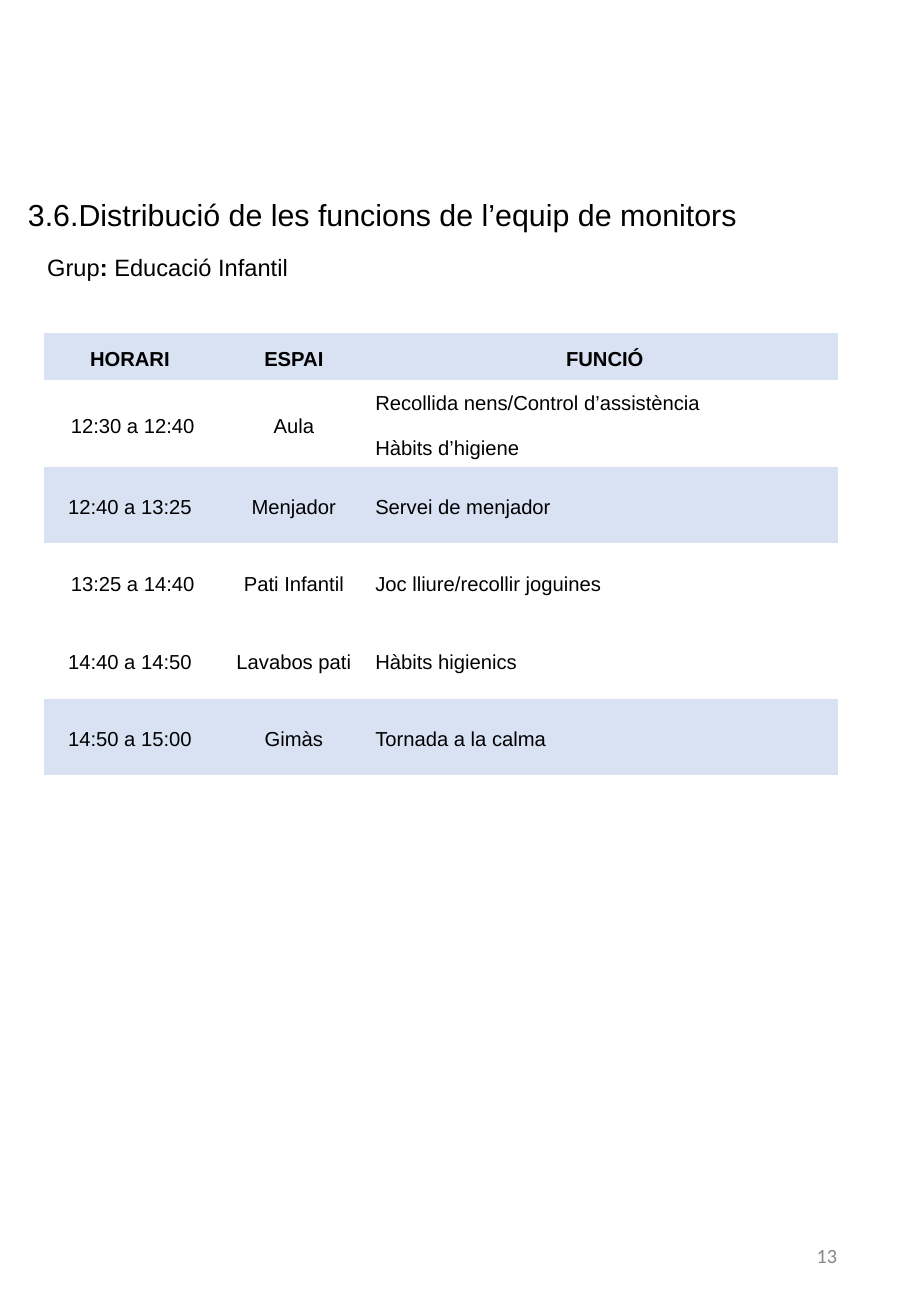
from dataclasses import dataclass

from pptx import Presentation
from pptx.dml.color import RGBColor
from pptx.enum.text import MSO_ANCHOR as Anchor, MSO_AUTO_SIZE as AutoSize, PP_ALIGN as Align
from pptx.oxml.ns import qn
from pptx.util import Inches, Pt


@dataclass(frozen=True)
class Theme:
    """Colours, fonts and type sizes of the slide."""
    ink: str = "000000"
    muted: str = "888888"
    band: str = "D8E2F3"
    paper: str = "FFFFFF"
    font: str = "Arial"
    number_font: str = "Calibri"
    title: int = 18
    group: int = 14
    body: int = 12


THEME = Theme()
NO_STYLE_NO_GRID = "{2D5ABB26-0587-4C30-8999-92F81FD0307C}"
HEADERS = ["HORARI", "ESPAI", "FUNCIÓ"]
SCHEDULE = [
    (" 12:30 a 12:40", "Aula", "Recollida nens/Control d’assistència\nHàbits d’higiene"),
    ("12:40 a 13:25", "Menjador", "Servei de menjador"),
    (" 13:25 a 14:40", "Pati Infantil", "Joc lliure/recollir joguines"),
    ("14:40 a 14:50", "Lavabos pati", "Hàbits higienics"),
    ("14:50 a 15:00", "Gimàs", "Tornada a la calma"),
]
COLUMN_WIDTHS = [1.42, 1.28, 3.84]
ROW_HEIGHTS = [0.39, 0.71, 0.63, 0.64, 0.64, 0.63]
BANDED_ROWS = {0, 2, 5}


def write_text(frame, text, size=THEME.body, font=THEME.font, color=THEME.ink, bold=False,
               align=Align.LEFT, line_spacing=None, gap=0):
    """Write paragraphs split at line breaks; text is a string or (text, bold) runs."""
    runs = [(text, bold)] if isinstance(text, str) else text
    paragraph = frame.paragraphs[0]
    for run_text, run_bold in runs:
        for index, line in enumerate(run_text.split("\n")):
            if index:
                paragraph = frame.add_paragraph()
                paragraph.space_before = Pt(gap)
            paragraph.alignment = align
            if line_spacing:
                paragraph.line_spacing = line_spacing
            run = paragraph.add_run()
            run.text = line
            run.font.name, run.font.size, run.font.bold = font, Pt(size), run_bold
            run.font.color.rgb = RGBColor.from_string(color)


def add_title(slide, left, top, width, height):
    """Place the section heading in the title placeholder."""
    title = slide.shapes.title
    title.left, title.top, title.width, title.height = map(Inches, (left, top, width, height))
    frame = title.text_frame
    frame.auto_size, frame.vertical_anchor = AutoSize.NONE, Anchor.TOP
    write_text(frame, "3.6.Distribució de les funcions de l’equip de monitors", size=THEME.title)


def add_label(slide, left, top, width, height, text, anchor=Anchor.TOP, **text_format):
    """Place a wrapped text box."""
    box = slide.shapes.add_textbox(*map(Inches, (left, top, width, height)))
    box.text_frame.word_wrap = True
    box.text_frame.vertical_anchor = anchor
    write_text(box.text_frame, text, **text_format)


def add_schedule(slide, left, top):
    """Place the timetable with its banded rows."""
    rows = [HEADERS, *SCHEDULE]
    graphic_frame = slide.shapes.add_table(
        len(rows), len(HEADERS), Inches(left), Inches(top),
        Inches(sum(COLUMN_WIDTHS)), Inches(sum(ROW_HEIGHTS)))
    graphic_frame.element.find(".//" + qn("a:tableStyleId")).text = NO_STYLE_NO_GRID
    table = graphic_frame.table
    table.horz_banding = False
    for column, width in zip(table.columns, COLUMN_WIDTHS):
        column.width = Inches(width)
    for row_index, (row, height, values) in enumerate(zip(table.rows, ROW_HEIGHTS, rows)):
        row.height = Inches(height)
        is_header = row_index == 0
        fill_color = THEME.band if row_index in BANDED_ROWS else THEME.paper
        for column_index, (cell, value) in enumerate(zip(row.cells, values)):
            cell.fill.solid()
            cell.fill.fore_color.rgb = RGBColor.from_string(fill_color)
            cell.vertical_anchor = Anchor.MIDDLE
            cell.margin_left = cell.margin_right = Inches(0.03)
            cell.margin_top = cell.margin_bottom = 0
            centred = is_header or column_index < 2
            write_text(cell.text_frame, value, bold=is_header, line_spacing=1.25, gap=10,
                       align=Align.CENTER if centred else Align.LEFT)


def main():
    """Build and save the presentation."""
    presentation = Presentation()
    presentation.slide_width, presentation.slide_height = Inches(7.5), Inches(10.83)
    slide = presentation.slides.add_slide(presentation.slide_layouts[5])
    add_title(slide, 0.13, 1.56, 7.37, 0.4)
    add_label(slide, 0.29, 2.03, 3.67, 0.64,
              [("Grup", False), (": ", True), ("Educació Infantil", False)], size=THEME.group)
    add_schedule(slide, 0.36, 2.74)
    add_label(slide, 5.3, 10.04, 1.69, 0.58, "13", anchor=Anchor.MIDDLE,
              font=THEME.number_font, color=THEME.muted, align=Align.RIGHT)
    presentation.save("out.pptx")


if __name__ == "__main__":
    main()
